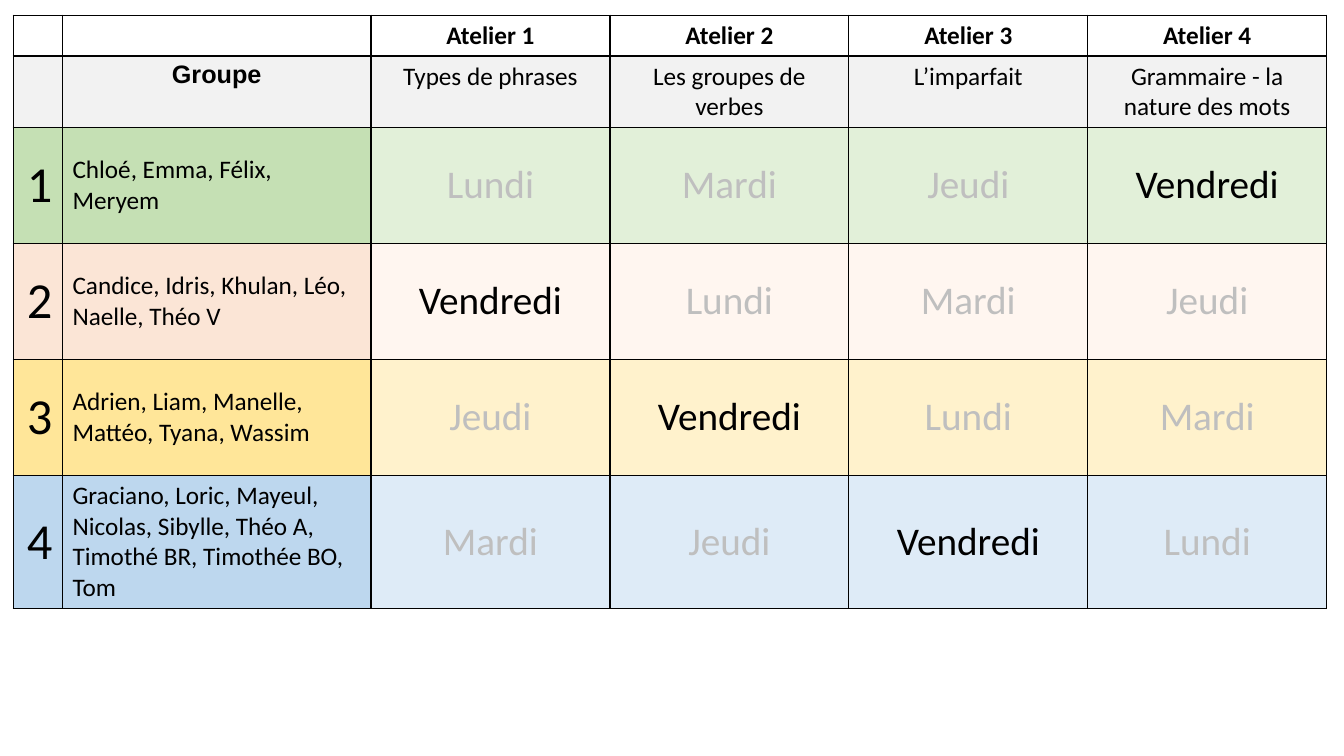
"""Build the weekly workshop rota slide, one coloured row per pupil group."""
import dataclasses

import lxml.etree
import pptx
import pptx.dml.color
import pptx.enum.text
import pptx.oxml.ns
import pptx.table
import pptx.util

PX = 9144
LEFT = 13
TOP = 15
COLUMN_WIDTHS = [49, 306] + [237] * 4
ROW_HEIGHTS = [40] * 2 + [115] * 4
BLACK = "000000"
GREY = "BFBFBF"
WHITE = "FFFFFF"
HEADER_FILL = "F2F2F2"
DAYS = ["Lundi", "Mardi", "Jeudi", "Vendredi"]
WORKSHOPS = [
    "Types de phrases",
    "Les groupes de verbes",
    "L’imparfait",
    "Grammaire - la nature des mots",
]
ALIGN = pptx.enum.text.PP_ALIGN
ANCHOR = pptx.enum.text.MSO_ANCHOR


@dataclasses.dataclass
class Group:
    pupils: str
    name_fill: str
    day_fill: str


GROUPS = [
    Group("Chloé, Emma, Félix, Meryem", "C5E0B4", "E2F0D9"),
    Group("Candice, Idris, Khulan, Léo, Naelle, Théo V", "FBE5D6", "FFF6F0"),
    Group("Adrien, Liam, Manelle, Mattéo, Tyana, Wassim", "FFE699", "FFF2CC"),
    Group(
        "Graciano, Loric, Mayeul, Nicolas, Sibylle, Théo A, "
        "Timothé BR, Timothée BO, Tom",
        "BDD7EE",
        "DEEBF7",
    ),
]


def px(length: int) -> pptx.util.Emu:
    return pptx.util.Emu(length * PX)


def rgb(colour: str) -> pptx.dml.color.RGBColor:
    return pptx.dml.color.RGBColor.from_string(colour)


def write(
    cell: pptx.table._Cell,
    text: str,
    *,
    size: int = 18,
    font: str = "Calibri",
    colour: str = BLACK,
    bold: bool = False,
    align: ALIGN = ALIGN.CENTER,
    anchor: ANCHOR = ANCHOR.TOP,
) -> None:
    cell.vertical_anchor = anchor
    para = cell.text_frame.paragraphs[0]
    para.alignment = align
    span = para.add_run()
    span.text = text
    span.font.size = pptx.util.Pt(size)
    span.font.name = font
    span.font.bold = bold
    span.font.color.rgb = rgb(colour)


def paint(cell: pptx.table._Cell, colour: str) -> None:
    cell.fill.solid()
    cell.fill.fore_color.rgb = rgb(colour)


def add_borders(cell: pptx.table._Cell) -> None:
    qn = pptx.oxml.ns.qn
    properties = cell._tc.get_or_add_tcPr()
    for index, side in enumerate(["lnL", "lnR", "lnT", "lnB"]):
        line = lxml.etree.Element(qn(f"a:{side}"), w=str(pptx.util.Pt(1)))
        fill = lxml.etree.SubElement(line, qn("a:solidFill"))
        lxml.etree.SubElement(fill, qn("a:srgbClr"), val=BLACK)
        properties.insert(index, line)


def fill_header(table: pptx.table.Table) -> None:
    for column in range(len(COLUMN_WIDTHS)):
        paint(table.cell(0, column), WHITE)
        paint(table.cell(1, column), HEADER_FILL)
    write(table.cell(1, 1), "Groupe", font="Arial", bold=True)
    for number, workshop in enumerate(WORKSHOPS, start=1):
        write(table.cell(0, number + 1), f"Atelier {number}", bold=True)
        write(table.cell(1, number + 1), workshop)


def fill_group(table: pptx.table.Table, index: int, group: Group) -> None:
    number, pupils, *day_cells = table.rows[index + 2].cells
    paint(number, group.name_fill)
    paint(pupils, group.name_fill)
    write(number, str(index + 1), size=36, align=ALIGN.RIGHT, anchor=ANCHOR.MIDDLE)
    write(pupils, group.pupils, align=ALIGN.LEFT, anchor=ANCHOR.MIDDLE)
    for workshop, cell in enumerate(day_cells):
        day = DAYS[(workshop - index) % len(DAYS)]
        colour = BLACK if day == "Vendredi" else GREY
        paint(cell, group.day_fill)
        write(cell, day, size=28, colour=colour, anchor=ANCHOR.MIDDLE)


def main() -> None:
    deck = pptx.Presentation()
    deck.slide_width = px(1333)
    deck.slide_height = px(750)
    page = deck.slides.add_slide(deck.slide_layouts[6])
    table = page.shapes.add_table(
        len(ROW_HEIGHTS),
        len(COLUMN_WIDTHS),
        px(LEFT),
        px(TOP),
        px(sum(COLUMN_WIDTHS)),
        px(sum(ROW_HEIGHTS)),
    ).table
    table.first_row = False
    table.horz_banding = False
    for column, width in zip(table.columns, COLUMN_WIDTHS):
        column.width = px(width)
    for row, height in zip(table.rows, ROW_HEIGHTS):
        row.height = px(height)
    fill_header(table)
    for index, group in enumerate(GROUPS):
        fill_group(table, index, group)
    for cell in table.iter_cells():
        add_borders(cell)
    deck.save("out.pptx")


if __name__ == "__main__":
    main()
